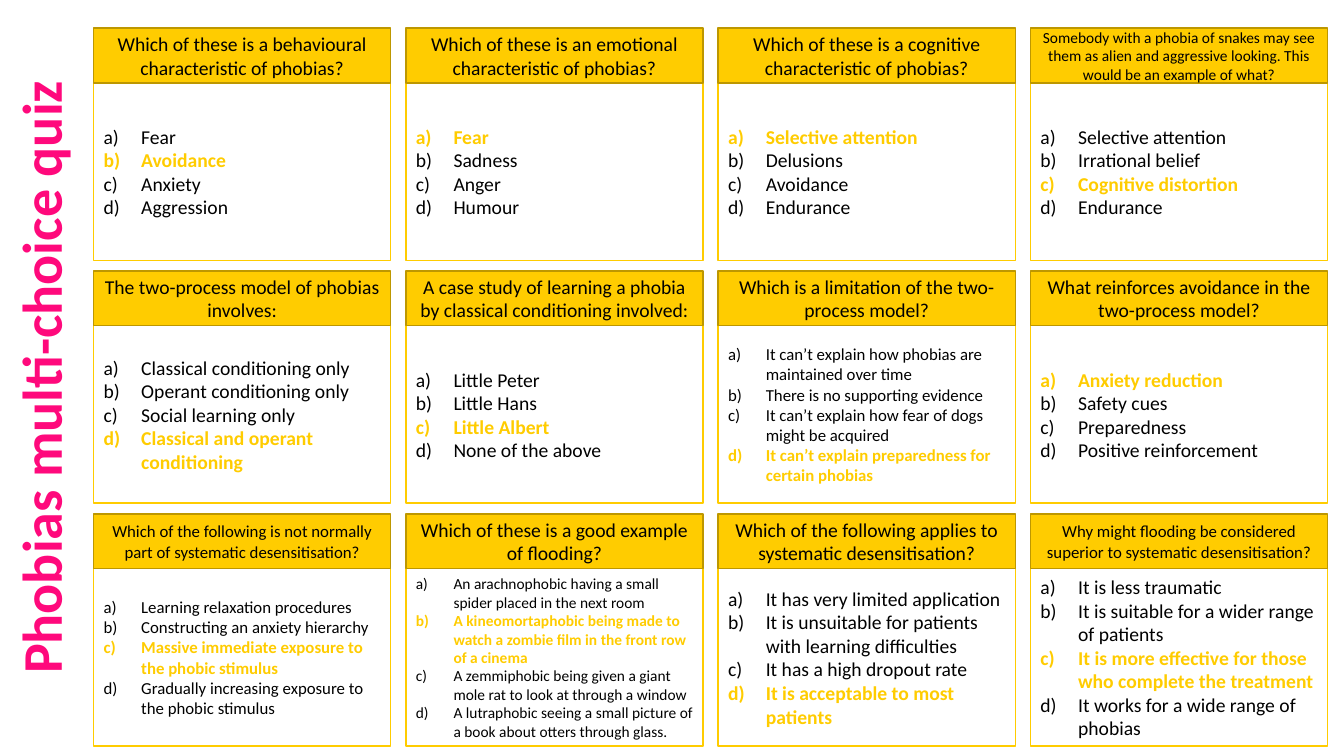
import pptx
import pptx.util
import pptx.dml.color
import pptx.enum.shapes
import pptx.enum.text
import lxml.etree
from pptx.oxml.ns import qn

Cm = pptx.util.Cm
Pt = pptx.util.Pt
ALIGN = pptx.enum.text.PP_ALIGN

TITLE = "Phobias multi-choice quiz"

# Row by row: question, question size, answers, index of the right answer, answer size
QUIZ = [
    [
        ("Which of these is a behavioural characteristic of phobias?", 14,
         ["Fear", "Avoidance", "Anxiety", "Aggression"], 1, 14),
        ("Which of these is an emotional characteristic of phobias?", 14,
         ["Fear", "Sadness", "Anger", "Humour"], 0, 14),
        ("Which of these is a cognitive characteristic of phobias?", 14,
         ["Selective attention", "Delusions", "Avoidance", "Endurance"], 0, 14),
        ("Somebody with a phobia of snakes may see them as alien and aggressive looking. "
         "This would be an example of what?", 11,
         ["Selective attention", "Irrational belief", "Cognitive distortion", "Endurance"], 2, 14),
    ],
    [
        ("The two-process model of phobias involves:", 14,
         ["Classical conditioning only", "Operant conditioning only",
          "Social learning only", "Classical and operant conditioning"], 3, 14),
        ("A case study of learning a phobia by classical conditioning involved:", 14,
         ["Little Peter", "Little Hans", "Little Albert", "None of the above"], 2, 14),
        ("Which is a limitation of the two-process model?", 14,
         ["It can’t explain how phobias are maintained over time",
          "There is no supporting evidence",
          "It can’t explain how fear of dogs might be acquired",
          "It can’t explain preparedness for certain phobias"], 3, 12),
        ("What reinforces avoidance in the two-process model?", 14,
         ["Anxiety reduction", "Safety cues", "Preparedness", "Positive reinforcement"], 0, 14),
    ],
    [
        ("Which of the following is not normally part of systematic desensitisation?", 12,
         ["Learning relaxation procedures",
          "Constructing an anxiety hierarchy",
          "Massive immediate exposure to the phobic stimulus",
          "Gradually increasing exposure to the phobic stimulus"], 2, 12),
        ("Which of these is a good example of flooding?", 14,
         ["An arachnophobic having a small spider placed in the next room",
          "A kineomortaphobic being made to watch a zombie film in the front row of a cinema",
          "A zemmiphobic being given a giant mole rat to look at through a window",
          "A lutraphobic seeing a small picture of a book about otters through glass."], 1, 11),
        ("Which of the following applies to systematic desensitisation?", 14,
         ["It has very limited application",
          "It is unsuitable for patients with learning difficulties",
          "It has a high dropout rate",
          "It is acceptable to most patients"], 3, 14),
        ("Why might flooding be considered superior to systematic desensitisation?", 12,
         ["It is less traumatic",
          "It is suitable for a wider range of patients",
          "It is more effective for those who complete the treatment",
          "It works for a wide range of phobias"], 2, 14),
    ],
]

COLOURS = {"text": "000000", "paper": "FFFFFF", "yellow": "FFCC00",
           "edge": "BD9700", "title": "FF097C"}
FONT = "Calibri"

# Lengths in centimetres
LEFT, TOP = 2.36, 0.71
COLUMN_STEP, ROW_STEP = 7.87, 6.12
CARD_WIDTH, QUESTION_HEIGHT, ANSWERS_HEIGHT = 7.49, 1.38, 4.47
ANSWER_INDENT = 0.95


def colour(name):
    return pptx.dml.color.RGBColor.from_string(COLOURS[name])


def add_box(slide, left, top, height, fill, line):
    box = slide.shapes.add_shape(pptx.enum.shapes.MSO_SHAPE.RECTANGLE,
                                 Cm(left), Cm(top), Cm(CARD_WIDTH), Cm(height))
    box.shadow.inherit = False
    box.fill.solid()
    box.fill.fore_color.rgb = colour(fill)
    box.line.color.rgb = colour(line)
    box.line.width = Pt(1)
    box.text_frame.word_wrap = True
    box.text_frame.vertical_anchor = pptx.enum.text.MSO_ANCHOR.MIDDLE
    return box.text_frame


def add_run(paragraph, text, size, ink="text", bold=False):
    run = paragraph.add_run()
    run.text = text
    run.font.name = FONT
    run.font.size = Pt(size)
    run.font.bold = bold
    run.font.color.rgb = colour(ink)


def letter_paragraph(paragraph):
    """Number the paragraph a), b), c) with a hanging indent."""
    properties = paragraph._p.get_or_add_pPr()
    properties.set("marL", str(Cm(ANSWER_INDENT)))
    properties.set("indent", str(-Cm(ANSWER_INDENT)))
    lxml.etree.SubElement(properties, qn("a:buFont"), typeface="+mj-lt")
    lxml.etree.SubElement(properties, qn("a:buAutoNum"), type="alphaLcParenR")


def add_card(slide, left, top, question, question_size, answers, right_answer, answer_size):
    answers_frame = add_box(slide, left, top + QUESTION_HEIGHT, ANSWERS_HEIGHT, "paper", "yellow")
    for index, answer in enumerate(answers):
        paragraph = answers_frame.paragraphs[0] if index == 0 else answers_frame.add_paragraph()
        paragraph.alignment = ALIGN.LEFT
        letter_paragraph(paragraph)
        is_right = index == right_answer
        add_run(paragraph, answer, answer_size, "yellow" if is_right else "text", is_right)

    question_frame = add_box(slide, left, top, QUESTION_HEIGHT, "yellow", "edge")
    question_frame.paragraphs[0].alignment = ALIGN.CENTER
    add_run(question_frame.paragraphs[0], question, question_size)


def set_title(slide):
    title = slide.shapes.title
    title.left, title.top, title.width, title.height = Cm(-8.51), Cm(8.53), Cm(19.02), Cm(1.96)
    title.rotation = 270
    frame = title.text_frame
    frame.word_wrap = True
    frame.auto_size = pptx.enum.text.MSO_AUTO_SIZE.NONE
    frame.vertical_anchor = pptx.enum.text.MSO_ANCHOR.TOP
    frame.paragraphs[0].alignment = ALIGN.CENTER
    add_run(frame.paragraphs[0], TITLE, 40, "title", True)


def main():
    deck = pptx.Presentation()
    deck.slide_width, deck.slide_height = Cm(33.87), Cm(19.05)
    slide = deck.slides.add_slide(deck.slide_layouts.get_by_name("Title Only"))
    set_title(slide)
    for row, cards in enumerate(QUIZ):
        for column, card in enumerate(cards):
            add_card(slide, LEFT + column * COLUMN_STEP, TOP + row * ROW_STEP, *card)
    deck.save("out.pptx")


if __name__ == "__main__":
    main()
